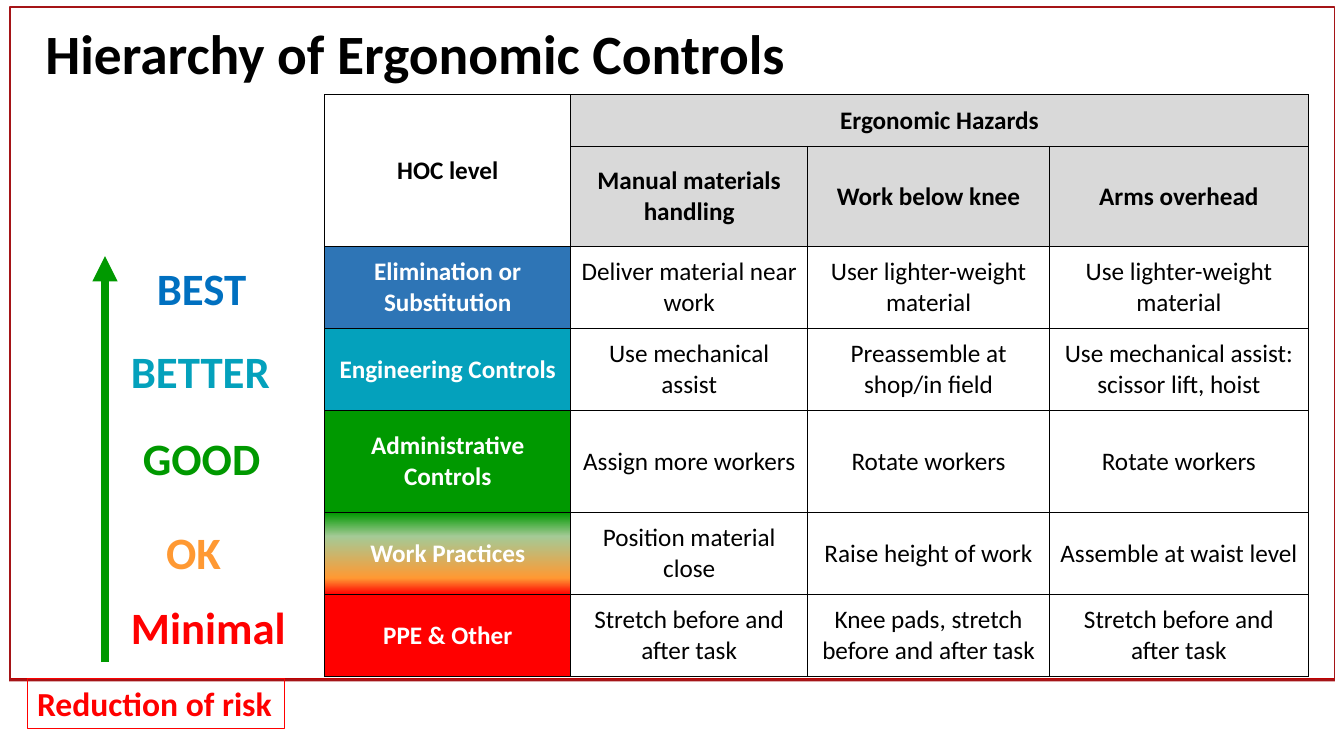
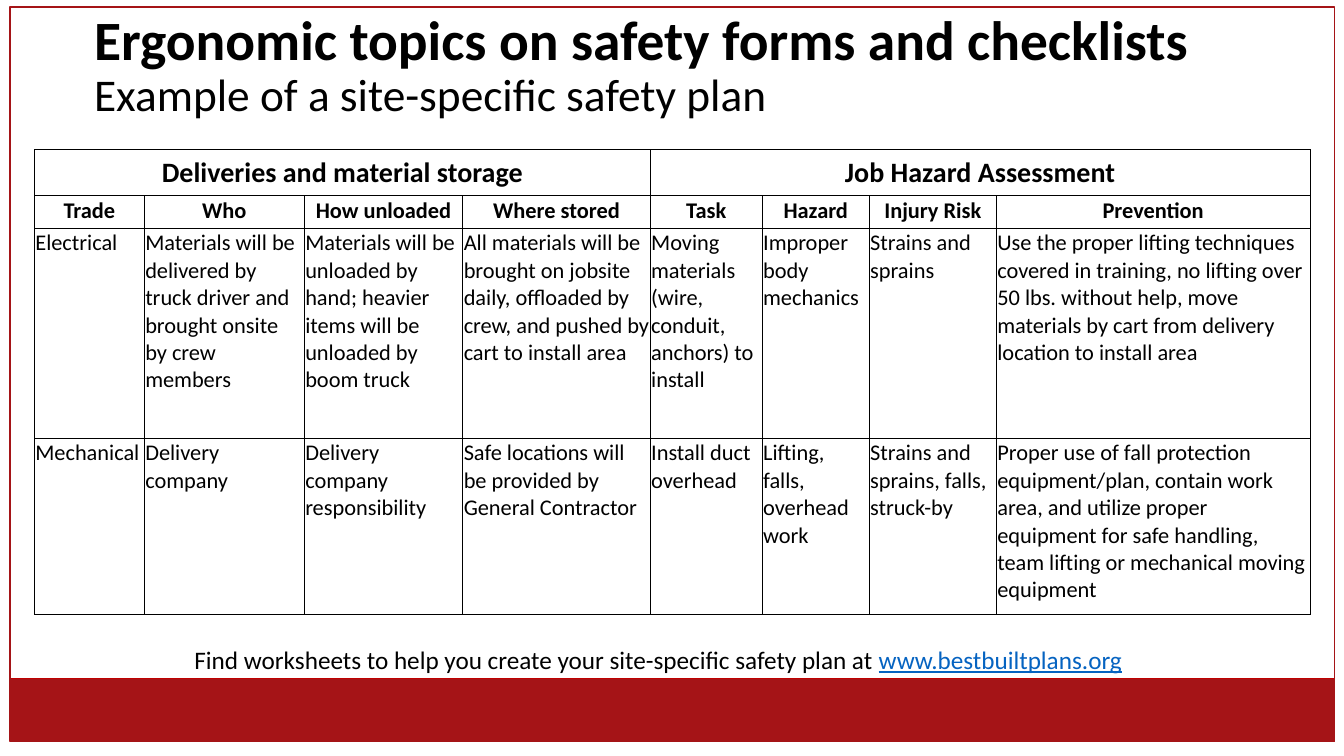
from pptx import Presentation
from pptx.dml.color import RGBColor
from pptx.enum.shapes import MSO_CONNECTOR, MSO_SHAPE
from pptx.enum.text import MSO_ANCHOR, MSO_AUTO_SIZE, PP_ALIGN
from pptx.oxml import parse_xml
from pptx.oxml.ns import nsdecls, qn
from pptx.util import Pt

FONT = "Calibri"
BLACK, WHITE, GREY = "000000", "FFFFFF", "D9D9D9"
CRIMSON, BAND_EDGE, RED = "A51417", "C00000", "FF0000"
TEAL, GREEN, ORANGE = "04A1BC", "009900", "FF9933"
BLUE, CELL_BLUE, LINK = "0070C0", "2E75B6", "0563C1"


def color(value):
    return RGBColor.from_string(value)


class SlideBuilder:
    """Holds the deck, the shared style and the current page."""

    def __init__(self):
        self.deck = Presentation()
        self.deck.slide_width, self.deck.slide_height = Pt(960), Pt(540)
        self.page = None

    def new_page(self):
        self.page = self.deck.slides.add_slide(self.deck.slide_layouts[5])
        self.rectangle(7.2, 484.6, 946, 44.6, fill=CRIMSON, line=BAND_EDGE)
        self.rectangle(7.2, 5, 946, 524.2, line=CRIMSON)

    def span(self, para, text, size, bold=False, ink=BLACK, underline=None):
        span = para.add_run()
        span.text = text
        span.font.name = FONT
        span.font.size = Pt(size)
        span.font.bold = bold
        span.font.underline = underline
        span.font.color.rgb = color(ink)

    def title(self, left, top, width, height, text, subtitle=None):
        box = self.page.shapes.title
        box.left, box.top = Pt(left), Pt(top)
        box.width, box.height = Pt(width), Pt(height)
        frame = box.text_frame
        frame.auto_size = MSO_AUTO_SIZE.NONE
        frame.vertical_anchor = MSO_ANCHOR.MIDDLE
        para = frame.paragraphs[0]
        para.alignment = PP_ALIGN.LEFT
        para.line_spacing = 0.9
        self.span(para, text, 39.6, bold=True)
        if subtitle:
            para.add_line_break()
            self.span(para, subtitle, 32.4)

    def rectangle(self, left, top, width, height, fill=None, line=None, weight=1):
        box = self.page.shapes.add_shape(
            MSO_SHAPE.RECTANGLE, Pt(left), Pt(top), Pt(width), Pt(height))
        box.shadow.inherit = False
        if fill:
            box.fill.solid()
            box.fill.fore_color.rgb = color(fill)
        else:
            box.fill.background()
        if line:
            box.line.color.rgb = color(line)
            box.line.width = Pt(weight)
        else:
            box.line.fill.background()
        return box

    def fill_text(self, box, spans, wrap=True):
        frame = box.text_frame
        frame.word_wrap = wrap
        frame.auto_size = MSO_AUTO_SIZE.SHAPE_TO_FIT_TEXT
        frame.vertical_anchor = MSO_ANCHOR.TOP
        para = frame.paragraphs[0]
        para.alignment = PP_ALIGN.LEFT
        for text, style in spans:
            self.span(para, text, **style)

    def text(self, left, top, width, height, spans, wrap=True):
        box = self.page.shapes.add_textbox(Pt(left), Pt(top), Pt(width), Pt(height))
        self.fill_text(box, spans, wrap)

    def arrow(self, start, end, ink, weight):
        line = self.page.shapes.add_connector(
            MSO_CONNECTOR.STRAIGHT, *(Pt(value) for value in start + end))
        line.line.color.rgb = color(ink)
        line.line.width = Pt(weight)
        line.line._get_or_add_ln().append(
            parse_xml(f'<a:tailEnd {nsdecls("a")} type="triangle"/>'))
        line._element.spPr.append(parse_xml(f'<a:effectLst {nsdecls("a")}/>'))

    def table(self, left, top, columns, rows, border):
        graphic = self.page.shapes.add_table(
            len(rows), len(columns), Pt(left), Pt(top), Pt(sum(columns)), Pt(sum(rows)))
        table = graphic.table
        table.first_row = table.horz_banding = False
        for column, width in zip(table.columns, columns):
            column.width = Pt(width)
        for row, height in zip(table.rows, rows):
            row.height = Pt(height)
        for cell in table.iter_cells():
            properties = cell._tc.get_or_add_tcPr()
            for side in ("lnL", "lnR", "lnT", "lnB"):
                properties.append(parse_xml(
                    f'<a:{side} {nsdecls("a")} w="{Pt(border)}"><a:solidFill>'
                    f'<a:srgbClr val="{BLACK}"/></a:solidFill></a:{side}>'))
            cell.fill.background()
        return table

    def cell(self, cell, text, size, bold=False, ink=BLACK, fill=None,
             align=PP_ALIGN.CENTER, anchor=MSO_ANCHOR.MIDDLE, tight=False):
        if isinstance(fill, list):
            self.gradient(cell, fill)
        elif fill:
            cell.fill.solid()
            cell.fill.fore_color.rgb = color(fill)
        if tight:
            cell.margin_left = cell.margin_right = cell.margin_top = Pt(0.7)
            cell.margin_bottom = Pt(0)
        cell.vertical_anchor = anchor
        para = cell.text_frame.paragraphs[0]
        para.alignment = align
        self.span(para, text, size, bold, ink)

    def gradient(self, cell, stops):
        cell.fill.gradient()
        cell.fill.gradient_angle = 270
        stop_list = cell._tc.tcPr.find(".//" + qn("a:gsLst"))
        for stop in list(stop_list):
            stop_list.remove(stop)
        for percent, ink in stops:
            stop_list.append(parse_xml(
                f'<a:gs {nsdecls("a")} pos="{percent * 1000}"><a:srgbClr val="{ink}"/></a:gs>'))


def build_hierarchy(slide):
    slide.new_page()
    slide.title(25.2, 13, 898.6, 54.7, "Hierarchy of Ergonomic Controls")

    # Control table
    table = slide.table(232, 67.7, [175.7, 169.2, 172.8, 184.8],
                        [37, 71.5, 58.5, 58.5, 73, 58.5, 58.5], border=1)
    table.cell(0, 0).merge(table.cell(1, 0))
    table.cell(0, 1).merge(table.cell(0, 3))
    slide.cell(table.cell(0, 0), "HOC level", 18, bold=True)
    slide.cell(table.cell(0, 1), "Ergonomic Hazards", 18, bold=True, fill=GREY)
    hazards = ["Manual materials handling", "Work below knee", "Arms overhead"]
    for column, hazard in enumerate(hazards, 1):
        slide.cell(table.cell(1, column), hazard, 18, bold=True, fill=GREY)
    practice_blend = [(0, GREEN), (29, "A4CA96"), (80, ORANGE), (100, RED)]
    levels = [
        ("Elimination or Substitution", CELL_BLUE,
         ["Deliver material near work", "User lighter-weight material",
          "Use lighter-weight material"]),
        ("Engineering Controls", TEAL,
         ["Use mechanical assist", "Preassemble at shop/in field",
          "Use mechanical assist: scissor lift, hoist"]),
        ("Administrative Controls", GREEN,
         ["Assign more workers", "Rotate workers", "Rotate workers"]),
        ("Work Practices", practice_blend,
         ["Position material close", "Raise height of work", "Assemble at waist level"]),
        ("PPE & Other", RED,
         ["Stretch before and after task", "Knee pads, stretch before and after task",
          "Stretch before and after task"]),
    ]
    for row, (level, fill, actions) in enumerate(levels, 2):
        slide.cell(table.cell(row, 0), level, 18, bold=True, ink=WHITE, fill=fill)
        for column, action in enumerate(actions, 1):
            slide.cell(table.cell(row, column), action, 18)

    # Rating scale
    slide.arrow((75, 473), (75, 183), GREEN, 6)
    ratings = [
        ("BEST", 105, 183, 89, BLUE, True),
        ("BETTER", 86.4, 242, 134, TEAL, True),
        ("GOOD", 95, 304, 99, GREEN, False),
        ("OK", 111.6, 371, 75, ORANGE, True),
        ("Minimal", 86.4, 425, 134, RED, True),
    ]
    for rating, left, top, width, ink, wrap in ratings:
        slide.text(left, top, width, 46,
                   [(rating, dict(size=32, bold=True, ink=ink))], wrap)

    # Risk label over the covered band
    slide.rectangle(0, 486.7, 960, 52.6, fill=WHITE)
    label = slide.rectangle(19.4, 484.6, 183.6, 36, line=RED, weight=0.75)
    slide.fill_text(label, [("Reduction of risk", dict(size=24, bold=True, ink=RED))],
                    wrap=False)


def build_safety_plan(slide):
    slide.new_page()
    slide.title(60, 9.4, 877, 77, "Ergonomic topics on safety forms and checklists",
                "Example of a site-specific safety plan")

    # Worksheet pointer
    slide.text(131.8, 456.5, 828, 29, [
        ("Find worksheets to help you create your site-specific safety plan at ",
         dict(size=18)),
        ("www.bestbuiltplans.org", dict(size=18, ink=LINK, underline=True)),
    ])

    # Plan table
    table = slide.table(24.6, 106.8, [78.5, 114.3, 113.2, 133.9, 80, 76.5, 90.8, 224],
                        [33, 23.5, 150, 125.5], border=0.5)
    for column, group in ((0, "Deliveries and material storage"),
                          (4, "Job Hazard Assessment")):
        table.cell(0, column).merge(table.cell(0, column + 3))
        slide.cell(table.cell(0, column), group, 20, bold=True, tight=True)
    rows = [
        ["Trade", "Who", "How unloaded", "Where stored",
         "Task", "Hazard", "Injury Risk", "Prevention"],
        ["Electrical",
         "Materials will be delivered by truck driver and brought onsite by crew members",
         "Materials will be unloaded by hand; heavier items will be unloaded by boom truck",
         "All materials will be brought on jobsite daily, offloaded by crew, "
         "and pushed by cart to install area",
         "Moving materials (wire, conduit, anchors) to install",
         "Improper body mechanics",
         "Strains and sprains",
         "Use the proper lifting techniques covered in training, no lifting over 50 lbs. "
         "without help, move materials by cart from delivery location to install area"],
        ["Mechanical",
         "Delivery company",
         "Delivery company responsibility",
         "Safe locations will be provided by General Contractor",
         "Install duct overhead",
         "Lifting, falls, overhead work",
         "Strains and sprains, falls, struck-by",
         "Proper use of fall protection equipment/plan, contain work area, and utilize proper "
         "equipment for safe handling, team lifting or mechanical moving equipment"],
    ]
    for row, entries in enumerate(rows, 1):
        heading = row == 1
        for column, entry in enumerate(entries):
            slide.cell(table.cell(row, column), entry, 16, bold=heading,
                       align=PP_ALIGN.CENTER if heading else PP_ALIGN.LEFT,
                       anchor=MSO_ANCHOR.TOP, tight=True)


def main():
    slide = SlideBuilder()
    build_hierarchy(slide)
    build_safety_plan(slide)
    slide.deck.save("out.pptx")


if __name__ == "__main__":
    main()
